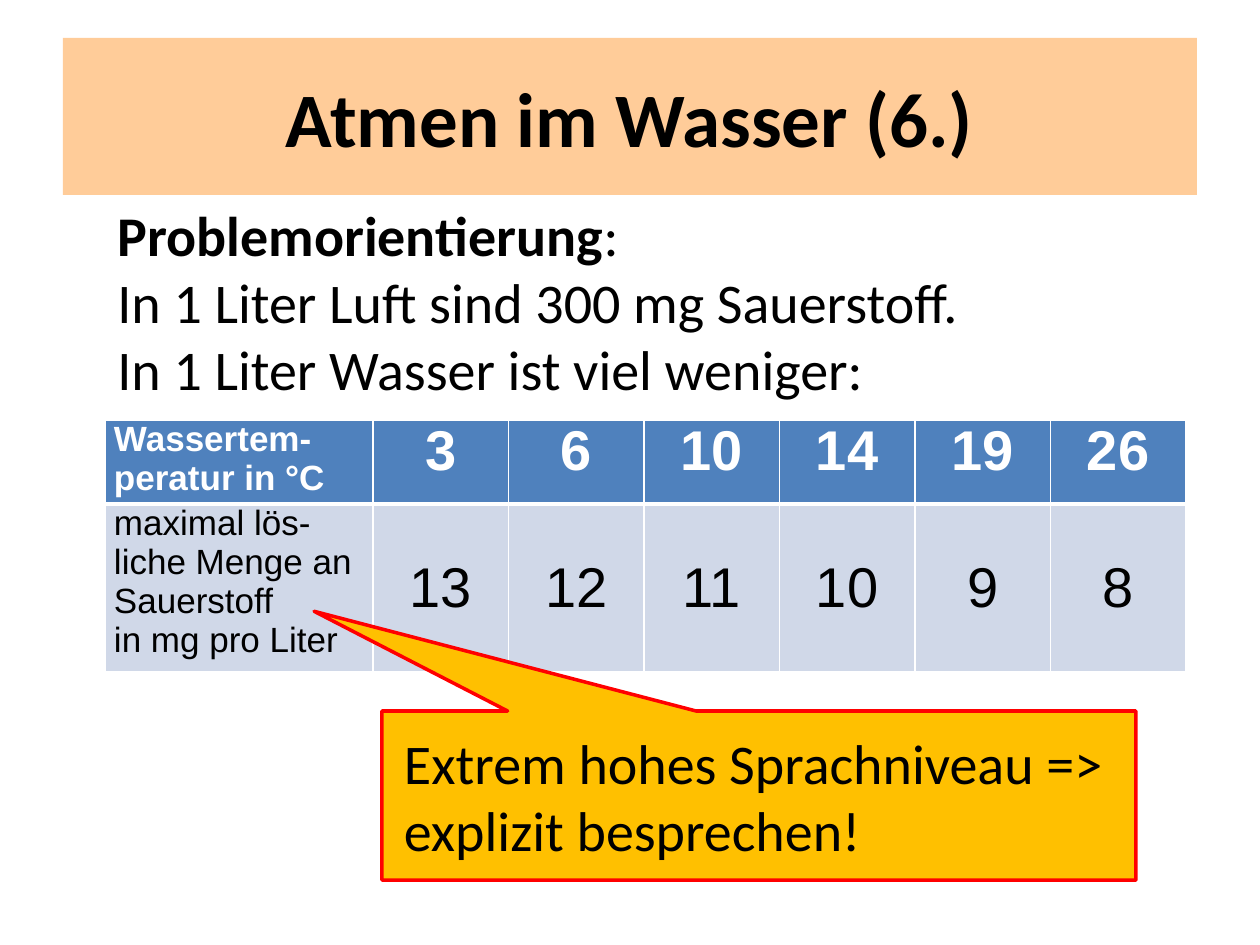
import pptx
import pptx.dml.color
import pptx.enum.shapes
import pptx.enum.text
import pptx.oxml
import pptx.oxml.ns
import pptx.util

RGB = pptx.dml.color.RGBColor
PEACH = RGB(0xFF, 0xCC, 0x99)
BLUE = RGB(0x4F, 0x81, 0xBD)
PALE = RGB(0xD0, 0xD8, 0xE8)
GOLD = RGB(0xFF, 0xC0, 0x00)
RED = RGB(0xFF, 0x00, 0x00)
BLACK = RGB(0x00, 0x00, 0x00)
WHITE = RGB(0xFF, 0xFF, 0xFF)
FORM = pptx.enum.shapes.MSO_SHAPE
ALIGN = pptx.enum.text.PP_ALIGN
ANCHOR = pptx.enum.text.MSO_ANCHOR
HEAD = ["Wassertem-peratur in °C", "3", "6", "10", "14", "19", "26"]
BODY = ["maximal lös-liche Menge an Sauerstoff\nin mg pro Liter",
        "13", "12", "11", "10", "9", "8"]


def px(n):
    return pptx.util.Emu(round(n * 914400 / 126))


def write(frame, text, size=32, font="Calibri", color=BLACK, bold=False,
          align=ALIGN.LEFT, lead=""):
    frame.word_wrap = True
    for i, line in enumerate(text.split("\n")):
        para = frame.paragraphs[0] if i == 0 else frame.add_paragraph()
        para.alignment = align
        parts = [(lead, True)] if lead and i == 0 else []
        for words, heavy in parts + [(line, bold)]:
            run = para.add_run()
            run.text = words
            run.font.size = pptx.util.Pt(size)
            run.font.name = font
            run.font.bold = heavy
            run.font.color.rgb = color


def block(slide, box, form, fill):
    shape = slide.shapes.add_shape(form, *map(px, box))
    shape.shadow.inherit = False
    shape.fill.solid()
    shape.fill.fore_color.rgb = fill
    shape.line.fill.background()
    shape.text_frame.vertical_anchor = ANCHOR.MIDDLE
    return shape


def title(slide, box):
    shape = block(slide, box, FORM.RECTANGLE, PEACH)
    write(shape.text_frame, "Atmen im Wasser (6.)", size=44, bold=True,
          align=ALIGN.CENTER)


def intro(slide, box):
    frame = slide.shapes.add_textbox(*map(px, box)).text_frame
    write(frame, ":\nIn 1 Liter Luft sind 300 mg Sauerstoff.\n"
                 "In 1 Liter Wasser ist viel weniger:",
          lead="Problemorientierung")


def edge(cell, **sides):
    props = cell._tc.get_or_add_tcPr()
    for side, width in sides.items():
        props.append(pptx.oxml.parse_xml(
            f'<a:ln{side} {pptx.oxml.ns.nsdecls("a")} w="{pptx.util.Pt(width)}">'
            f'<a:solidFill><a:srgbClr val="{WHITE}"/></a:solidFill></a:ln{side}>'))


def table(slide, box, first=268, top=84):
    grid = slide.shapes.add_table(2, len(HEAD), *map(px, box)).table
    rest = (box[2] - first) / (len(HEAD) - 1)
    for i, col in enumerate(grid.columns):
        col.width = px(rest if i else first)
    for row, tall in zip(grid.rows, (top, box[3] - top)):
        row.height = px(tall)
    looks = ((HEAD, BLUE, WHITE, True, 1, 3), (BODY, PALE, BLACK, False, 3, 1))
    for r, (texts, fill, color, bold, above, below) in enumerate(looks):
        for c, text in enumerate(texts):
            cell = grid.cell(r, c)
            cell.margin_left = cell.margin_right = px(9)
            cell.margin_top = cell.margin_bottom = 0
            cell.vertical_anchor = ANCHOR.MIDDLE if r and c else ANCHOR.TOP
            edge(cell, L=1, R=1, T=above, B=below)
            cell.fill.solid()
            cell.fill.fore_color.rgb = fill
            write(cell.text_frame, text, size=32 if c else 20, font="Arial",
                  color=color, bold=bold,
                  align=ALIGN.CENTER if c else ALIGN.LEFT)


def callout(slide, box):
    shape = block(slide, box, FORM.RECTANGULAR_CALLOUT, GOLD)
    shape.adjustments[0] = -0.59
    shape.adjustments[1] = -1.09
    shape.line.color.rgb = RED
    shape.line.width = pptx.util.Pt(2)
    frame = shape.text_frame
    frame.margin_left = frame.margin_right = px(22)
    write(frame, "Extrem hohes Sprachniveau => explizit besprechen!")


def main():
    deck = pptx.Presentation()
    deck.slide_width, deck.slide_height = px(1260), px(945)
    slide = deck.slides.add_slide(deck.slide_layouts[6])
    title(slide, (63, 38, 1134, 157))
    intro(slide, (105, 194, 1052, 352))
    table(slide, (105, 420, 1081, 252))
    callout(slide, (382, 711, 754, 169))
    deck.save("out.pptx")


if __name__ == "__main__":
    main()
